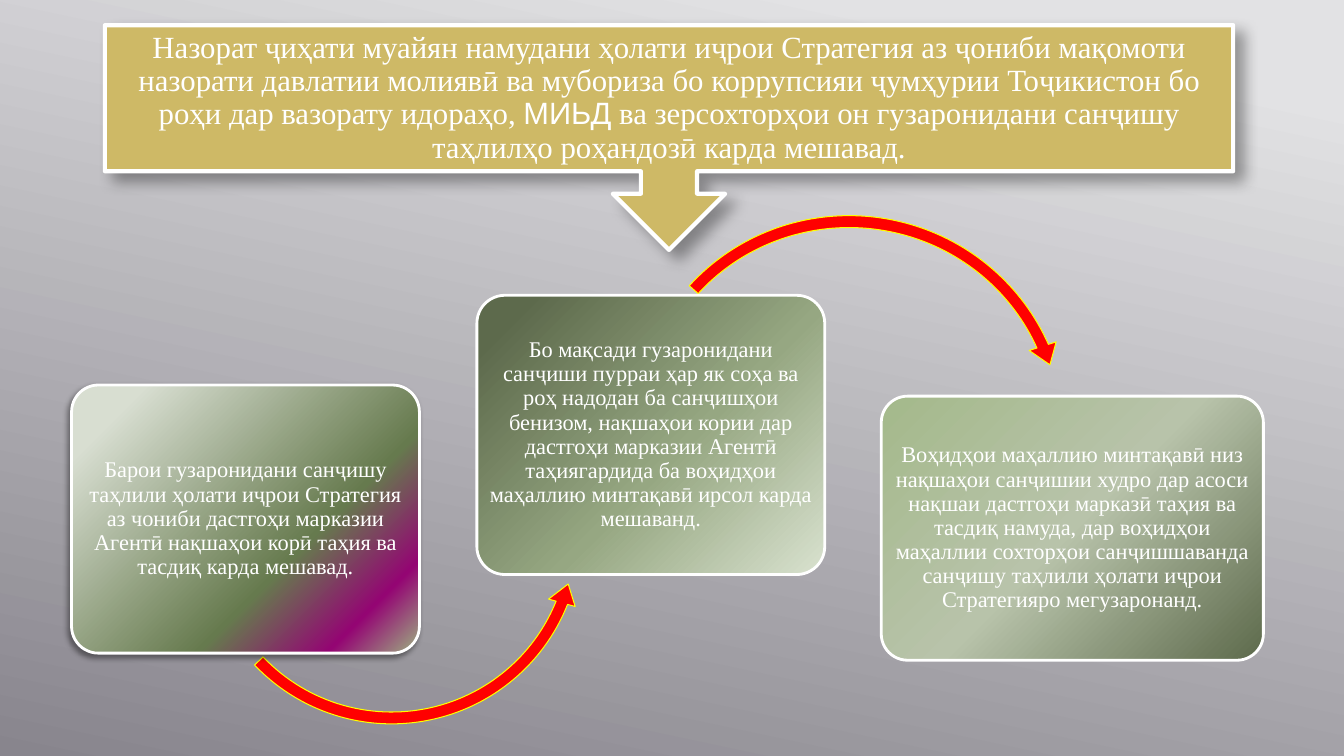
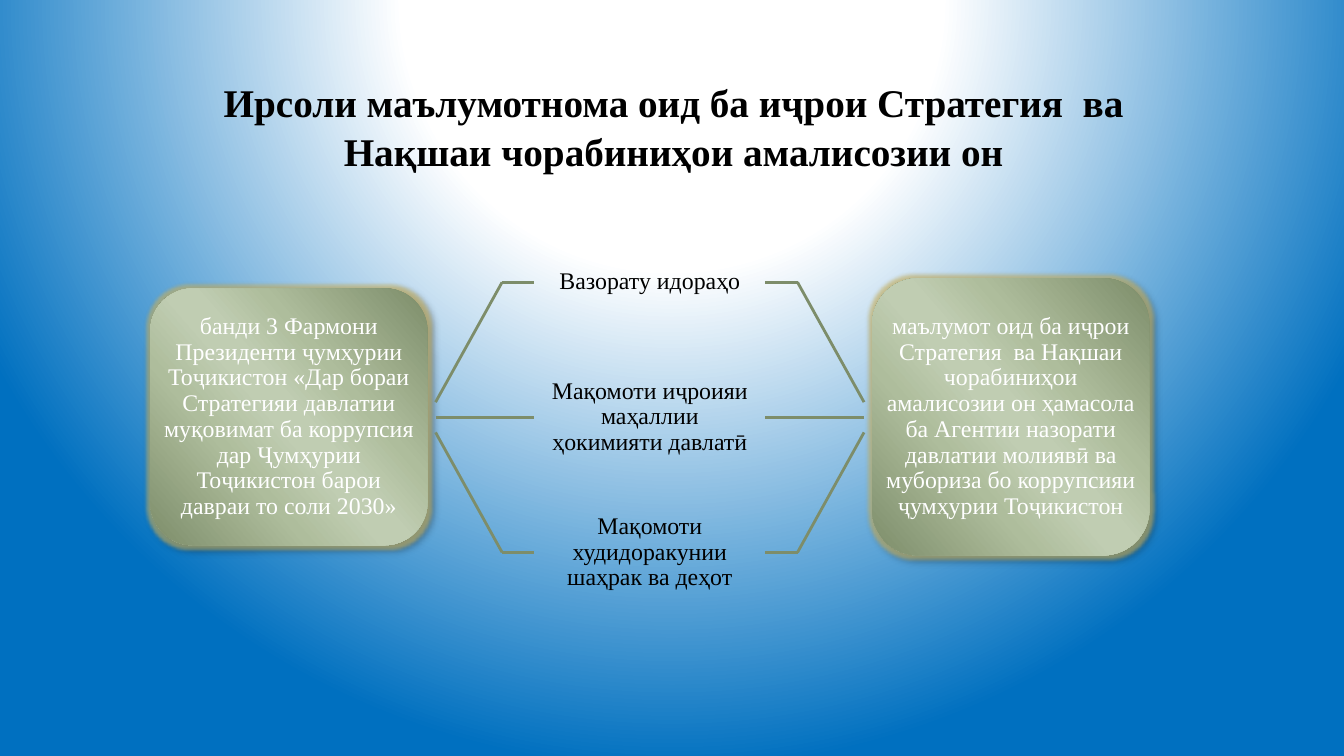
import pptx
import pptx.util
import pptx.dml.color
import pptx.enum.shapes
import pptx.enum.text
import pptx.oxml.ns
from lxml import etree

Inches = pptx.util.Inches
Pt = pptx.util.Pt
qn = pptx.oxml.ns.qn
SHAPE = pptx.enum.shapes.MSO_SHAPE

COLORS = {
    "white": "FFFFFF", "black": "000000", "gold": "CEB966", "red": "FF0000",
    "yellow": "FFFF00", "olive": "7D8D6A", "sage": "AEBD9C", "pale": "C0CDB2",
    "mist": "D8DED1", "moss": "667A4E", "purple": "940573", "leaf": "9CB381",
    "forest": "5D6A4C", "fern": "96A782", "cream": "D9E2CF", "ash": "B8C3AA",
    "grass": "A4B98B", "silver": "E2E2E4", "slate": "88858D", "blue": "0070C0",
}
SERIF, SANS = "Times New Roman", "Arial"
OLIVE_STOPS = [(0, "olive"), (33, "sage"), (47, "pale"), (53, "pale"), (68, "sage"), (100, "olive")]


def color(name):
    return pptx.dml.color.RGBColor.from_string(COLORS[name])


def add_node(parent, tag, **attributes):
    node = etree.SubElement(parent, qn(tag))
    for name, value in attributes.items():
        node.set(name, str(value))
    return node


def paint_gradient(owner, fill, stops, angle=None, focus=None):
    """Linear at an angle in degrees, or circular around a focus in percent."""
    fill.gradient()
    gradient = owner.element.find(".//" + qn("a:gradFill"))
    for child in list(gradient):
        gradient.remove(child)
    stop_list = add_node(gradient, "a:gsLst")
    for position, name in stops:
        stop = add_node(stop_list, "a:gs", pos=position * 1000)
        add_node(stop, "a:srgbClr", val=COLORS[name])
    if focus:
        circle = add_node(gradient, "a:path", path="circle")
        sides = {side: value * 1000 for side, value in zip("ltrb", focus)}
        add_node(circle, "a:fillToRect", **sides)
    else:
        add_node(gradient, "a:lin", ang=angle * 60000, scaled=0)


def add_effect(shape, tag, tint, alpha, **attributes):
    effects = shape.element.spPr.find(qn("a:effectLst"))
    effect = add_node(effects, tag, **attributes)
    node = add_node(effect, "a:srgbClr", val=COLORS[tint])
    add_node(node, "a:alpha", val=alpha * 1000)


def add_shadow(shape, alpha, blur, distance, angle):
    add_effect(shape, "a:outerShdw", "black", alpha, blurRad=Pt(blur), dist=Pt(distance),
               dir=angle * 60000, algn="ctr", rotWithShape=0)


def add_block(page, kind, box, border=None, width=0):
    shape = page.shapes.add_shape(kind, *map(Inches, box))
    shape.shadow.inherit = False
    if border:
        shape.line.color.rgb = color(border)
        shape.line.width = Pt(width)
    else:
        shape.line.fill.background()
    return shape


def write_text(shape, spans, size, ink="white", insets=(0, 0)):
    """Centred paragraph; spans are (text, font) pairs."""
    frame = shape.text_frame
    frame.word_wrap = True
    frame.vertical_anchor = pptx.enum.text.MSO_ANCHOR.MIDDLE
    frame.margin_left = frame.margin_right = Inches(insets[0])
    frame.margin_top = frame.margin_bottom = Inches(insets[1])
    para = frame.paragraphs[0]
    para.alignment = pptx.enum.text.PP_ALIGN.CENTER
    para.line_spacing = 0.9
    para.font.size = Pt(size)
    para.font.name = SERIF
    para.font.color.rgb = color(ink)
    for text, font in spans:
        span = para.add_run()
        span.text = text
        if font != SERIF:
            span.font.name = font


def add_callout(page, box, spans):
    callout = add_block(page, SHAPE.DOWN_ARROW_CALLOUT, box, "white", 3)
    callout.fill.solid()
    callout.fill.fore_color.rgb = color("gold")
    add_shadow(callout, 35, 10.2, 8, 45)
    write_text(callout, spans, 22, insets=(0.17, 0.17))


def add_step(page, box, text, stops, angle=None, focus=None):
    step = add_block(page, SHAPE.ROUNDED_RECTANGLE, box, "white", 2)
    step.adjustments[0] = 0.1
    paint_gradient(step, step.fill, stops, angle, focus)
    write_text(step, [(text, SERIF)], 16, insets=(0.03, 0.02))
    return step


def add_swoop(page, kind, box, rotation, band, head, angles):
    """Curved arrow; band and head in percent, angles in degrees."""
    swoop = add_block(page, kind, box, "yellow", 0.75)
    swoop.rotation = rotation
    swoop.fill.solid()
    swoop.fill.fore_color.rgb = color("red")
    values = [band / 100, *(angle * 0.6 for angle in angles), head / 100]
    for index, value in enumerate(values):
        swoop.adjustments[index] = value


def add_end_card(page, box, text):
    card = add_block(page, SHAPE.ROUNDED_RECTANGLE, box)
    paint_gradient(card, card.fill, OLIVE_STOPS, 139)
    add_effect(card, "a:glow", "gold", 60, rad=Pt(5))
    add_shadow(card, 40, 4, 3, 45)
    write_text(card, [(text, SERIF)], 17)


def add_rule(page, start, end):
    rule = page.shapes.add_connector(pptx.enum.shapes.MSO_CONNECTOR.STRAIGHT,
                                     *map(Inches, (*start, *end)))
    rule.line.color.rgb = color("olive")
    rule.line.width = Pt(2)
    add_node(rule.element.spPr, "a:effectLst")


def add_branches(page, box, labels):
    """Stacked labels, joined to the middle of both sides of the box."""
    left, top, width, height = box
    row_height = height / len(labels)
    middle = top + height / 2
    slant, stub = 0.66, 0.32
    for index, label in enumerate(labels):
        row_top = top + index * row_height
        row_middle = row_top + row_height / 2
        joint = middle + 0.15 * (index - 1)
        for side, inward in ((left, 1), (left + width, -1)):
            bend = (side + inward * slant, row_middle)
            add_rule(page, (side, joint), bend)
            add_rule(page, bend, (bend[0] + inward * stub, row_middle))
        gap = slant + stub
        area = (left + gap, row_top, width - 2 * gap, row_height)
        text_box = page.shapes.add_textbox(*map(Inches, area))
        write_text(text_box, [(label, SERIF)], 17, "black", (0.13, 0.13))


def add_title(page, box, text):
    title = page.shapes.title
    title.left, title.top, title.width, title.height = map(Inches, box)
    write_text(title, [(text, SERIF)], 28, "black", (0.1, 0.05))
    para = title.text_frame.paragraphs[0]
    para.font.bold = True
    para.line_spacing = 1.05


def build_control_slide(deck):
    page = deck.slides.add_slide(deck.slide_layouts[6])
    paint_gradient(page, page.background.fill, [(10, "silver"), (100, "slate")], 102)
    add_callout(page, (1.04, 0.25, 11.19, 2.23), [
        ("Назорат ҷиҳати муайян намудани ҳолати иҷрои Стратегия аз ҷониби мақомоти назорати "
         "давлатии молиявӣ ва мубориза бо коррупсияи ҷумҳурии Тоҷикистон бо роҳи дар вазорату "
         "идораҳо, ", SERIF),
        ("МИЬД", SANS),
        (" ва зерсохторҳои он гузаронидани санҷишу таҳлилҳо роҳандозӣ карда мешавад.", SERIF)])

    # Arrows between the steps
    add_swoop(page, SHAPE.LEFT_CIRCULAR_ARROW, (1.93, 3.35, 3.91, 3.91), 345.7,
              3, 3.5, (6.2, 36.12, 150.74))
    add_swoop(page, SHAPE.CIRCULAR_ARROW, (6.21, 2.06, 4.45, 4.38), 11.2,
              2.7, 3.2, (5.48, 325.65, 210.31))

    # Three steps
    first = add_step(
        page, (0.71, 3.82, 3.45, 2.66),
        "Барои гузаронидани санҷишу таҳлили ҳолати иҷрои Стратегия аз чониби дастгоҳи марказии "
        "Агентӣ нақшаҳои корӣ таҳия ва тасдиқ карда мешавад.",
        [(12, "mist"), (64, "moss"), (85, "purple"), (100, "leaf")], angle=45)
    add_shadow(first, 40, 4, 3, 135)
    add_step(
        page, (4.73, 2.93, 3.45, 2.77),
        "Бо мақсади гузаронидани санҷиши пурраи ҳар як соҳа ва роҳ надодан ба санҷишҳои бенизом, "
        "нақшаҳои кории дар дастгоҳи марказии Агентӣ таҳиягардида ба воҳидҳои маҳаллию минтақавӣ "
        "ирсол карда мешаванд.",
        [(9, "forest"), (57, "fern"), (100, "cream")], angle=45)
    add_step(
        page, (8.74, 3.93, 3.79, 2.62),
        "Воҳидҳои маҳаллию минтақавӣ низ нақшаҳои санҷишии худро дар асоси нақшаи дастгоҳи "
        "марказӣ таҳия ва тасдиқ намуда, дар воҳидҳои маҳаллии сохторҳои санҷишшаванда санҷишу "
        "таҳлили ҳолати иҷрои Стратегияро мегузаронанд.",
        [(0, "forest"), (50, "ash"), (100, "grass")], focus=(100, 100, 0, 0))


def build_report_slide(deck):
    page = deck.slides.add_slide(deck.slide_layouts[5])
    paint_gradient(page, page.background.fill, [(0, "white"), (35, "white"), (100, "blue")],
                   focus=(50, -80, 50, 180))
    add_title(page, (1.51, 0.7, 10.34, 1.08),
              "Ирсоли маълумотнома оид ба иҷрои Стратегия  ва Нақшаи чорабиниҳои амалисозии он")

    # From the decree, through the bodies, to the report
    add_end_card(page, (1.49, 2.86, 2.75, 2.55),
                 "банди 3 Фармони Президенти ҷумҳурии Тоҷикистон «Дар бораи Стратегияи давлатии "
                 "муқовимат ба коррупсия дар Ҷумҳурии Тоҷикистон барои давраи то соли 2030»")
    add_branches(page, (4.32, 2.13, 4.25, 4.02), [
        "Вазорату идораҳо",
        "Мақомоти иҷроияи маҳаллии ҳокимияти давлатӣ",
        "Мақомоти худидоракунии шаҳрак ва деҳот"])
    add_end_card(page, (8.65, 2.76, 2.75, 2.75),
                 "маълумот оид ба иҷрои Стратегия  ва Нақшаи чорабиниҳои амалисозии он ҳамасола "
                 "ба Агентии назорати давлатии молиявӣ ва мубориза бо коррупсияи ҷумҳурии "
                 "Тоҷикистон")


def main():
    deck = pptx.Presentation()
    deck.slide_width, deck.slide_height = Inches(13.33), Inches(7.5)
    build_control_slide(deck)
    build_report_slide(deck)
    deck.save("out.pptx")


if __name__ == "__main__":
    main()
